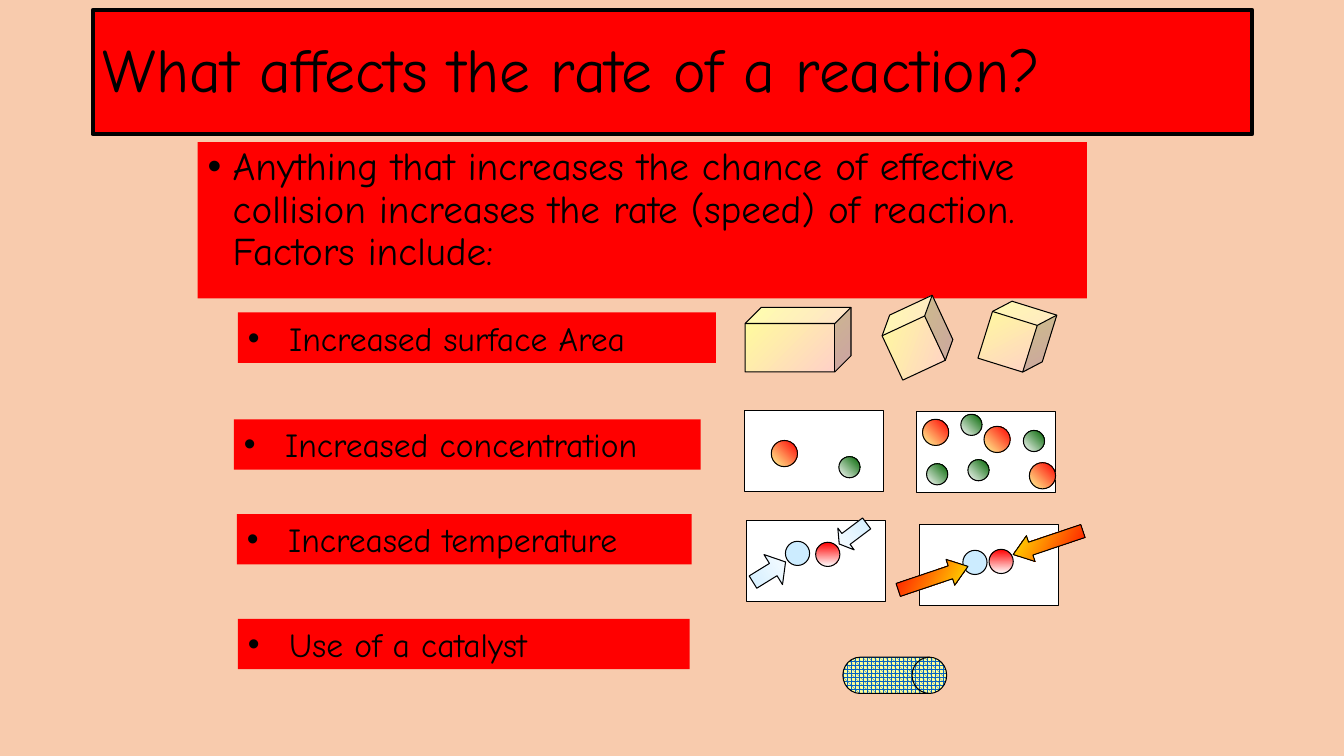
from dataclasses import dataclass

from lxml import etree
from pptx import Presentation
from pptx.dml.color import RGBColor
from pptx.enum.dml import MSO_PATTERN
from pptx.enum.shapes import MSO_SHAPE
from pptx.enum.text import MSO_ANCHOR, MSO_AUTO_SIZE, PP_ALIGN
from pptx.oxml.ns import qn
from pptx.util import Inches, Pt

RECTANGLE = MSO_SHAPE.RECTANGLE
OVAL = MSO_SHAPE.OVAL
CUBE = MSO_SHAPE.CUBE
ARROW = MSO_SHAPE.RIGHT_ARROW
DRUM = MSO_SHAPE.FLOWCHART_DIRECT_ACCESS_STORAGE
SPHERE = MSO_PATTERN.SPHERE
MIDDLE = MSO_ANCHOR.MIDDLE
TOP = MSO_ANCHOR.TOP
LEFT = PP_ALIGN.LEFT
NO_AUTOFIT = MSO_AUTO_SIZE.NONE


@dataclass(frozen=True)
class Theme:
    """Colours, gradients (start, end, clockwise angle) and type sizes."""
    font: str = "Comic Neue"
    title_size: int = 44
    body_size: int = 28
    factor_size: int = 24
    thick: float = 3
    thin: float = 0.75
    background: str = "F8CBAD"
    panel: str = "FF0000"
    ink: str = "000000"
    container: str = "FFFFFF"
    cool_particle: str = "CCECFF"
    mesh: str = "0563C1"
    mesh_back: str = "FFFF99"
    solid: tuple = ("FFFF99", "FFCCCC", 45)
    large_particle: tuple = ("FFFF99", "FF0000", 315)
    small_particle: tuple = ("FFFFFF", "006600", 315)
    hot_particle: tuple = ("FF0000", "FFFFFF", 90)
    slow: tuple = ("CCECFF", "FFFFFF", 0)
    fast: tuple = ("FF0000", "FFFF00", 315)


THEME = Theme()


def rgb(value):
    """Return the colour for a hex string."""
    return RGBColor.from_string(value)


def paint(fill, colour):
    """Fill with one colour or with a gradient tuple."""
    if isinstance(colour, str):
        fill.solid()
        fill.fore_color.rgb = rgb(colour)
        return
    start, end, angle = colour
    fill.gradient()
    fill.gradient_angle = (360 - angle) % 360
    for stop, shade in zip(fill.gradient_stops, (start, end)):
        stop.color.rgb = rgb(shade)


def outline(shape, width):
    """Draw a dark line of the given width around a shape."""
    shape.line.color.rgb = rgb(THEME.ink)
    shape.line.width = Pt(width)


def draw(slide, kind, box, colour, rotation=0):
    """Add a thinly outlined shape in a box given in inches."""
    shape = slide.shapes.add_shape(kind, *map(Inches, box))
    shape.shadow.inherit = False
    paint(shape.fill, colour)
    outline(shape, THEME.thin)
    shape.rotation = rotation
    return shape


def write(shape, text, size, anchor, spacing=1.0, indent=0):
    """Put one left-aligned run in a shape, bulleted if it has an indent."""
    frame = shape.text_frame
    frame.word_wrap = True
    frame.auto_size = NO_AUTOFIT
    frame.vertical_anchor = anchor
    paragraph = frame.paragraphs[0]
    paragraph.alignment = LEFT
    paragraph.line_spacing = spacing
    if indent:
        properties = paragraph._p.get_or_add_pPr()
        properties.set("marL", str(Inches(indent)))
        properties.set("indent", str(-Inches(indent)))
        etree.SubElement(properties, qn("a:buFont")).set("typeface", "Arial")
        etree.SubElement(properties, qn("a:buChar")).set("char", "•")
    run = paragraph.add_run()
    run.text = text
    run.font.name = THEME.font
    run.font.size = Pt(size)
    run.font.color.rgb = rgb(THEME.ink)


def add_title(slide, box, text):
    """Format the title placeholder as an outlined banner."""
    title = slide.shapes.title
    title.left, title.top, title.width, title.height = map(Inches, box)
    paint(title.fill, THEME.panel)
    outline(title, THEME.thick)
    write(title, text, THEME.title_size, MIDDLE, spacing=0.9)


def add_panel(slide, box, text, size, indent, spacing=1.0):
    """Add a bulleted statement on a coloured panel."""
    panel = slide.shapes.add_textbox(*map(Inches, box))
    paint(panel.fill, THEME.panel)
    write(panel, text, size, TOP, spacing, indent)


def add_cubes(slide, left, top):
    """Show one block beside two smaller tilted pieces."""
    for x, y, width, rotation in ((0, 0.03, 1.05, 0), (1.4, 0.01, 0.62, 335),
                                  (2.39, 0, 0.62, 17.3)):
        draw(slide, CUBE, (left + x, top + y, width, 0.64), THEME.solid, rotation)


def add_container(slide, left, top):
    """Add the white vessel that holds particles."""
    draw(slide, RECTANGLE, (left, top, 1.38, 0.81), THEME.container)


def add_mixture(slide, left, top, large, small):
    """Show large and small particles in a container."""
    add_container(slide, left, top)
    for places, size, colour in ((large, 0.26, THEME.large_particle),
                                 (small, 0.21, THEME.small_particle)):
        for x, y in places:
            draw(slide, OVAL, (left + x, top + y, size, size), colour)


def add_collision(slide, left, top, cool, hot, arrows, colour):
    """Show two particles driven together by arrows."""
    add_container(slide, left, top)
    for (x, y), shade in ((cool, THEME.cool_particle), (hot, THEME.hot_particle)):
        draw(slide, OVAL, (left + x, top + y, 0.24, 0.24), shade)
    for x, y, width, height, rotation, flipped, shaft, head in arrows:
        arrow = draw(slide, ARROW, (left + x, top + y, width, height), colour, rotation)
        arrow.adjustments[0] = shaft
        arrow.adjustments[1] = head
        if flipped:
            arrow._element.spPr.find(qn("a:xfrm")).set("flipH", "1")


def add_catalyst(slide, left, top):
    """Show the catalyst as a meshed drum."""
    drum = draw(slide, DRUM, (left, top, 1.03, 0.36), THEME.mesh_back)
    drum.fill.patterned()
    drum.fill.pattern = SPHERE
    drum.fill.fore_color.rgb = rgb(THEME.mesh)
    drum.fill.back_color.rgb = rgb(THEME.mesh_back)


def build_rate_slide(presentation):
    """Build the slide on what affects the rate of a reaction."""
    slide = presentation.slides.add_slide(presentation.slide_layouts[5])
    paint(slide.background.fill, THEME.background)
    add_title(slide, (0.92, 0.1, 11.5, 1.23), "What affects the rate of a reaction?")
    add_panel(slide, (1.96, 1.41, 8.82, 1.55),
              "Anything that increases the chance of effective collision "
              "increases the rate (speed) of reaction. Factors include:",
              THEME.body_size, 0.25, spacing=0.9)
    factors = (("Increased surface Area", 2.36, 3.1, 4.74),
               ("Increased concentration", 2.32, 4.16, 4.63),
               ("Increased temperature", 2.35, 5.1, 4.51),
               ("Use of a catalyst", 2.36, 6.14, 4.48))
    for factor, left, top, width in factors:
        add_panel(slide, (left, top, width, 0.5), factor, THEME.factor_size, 0.41)
    add_cubes(slide, 7.39, 3.02)
    add_mixture(slide, 7.38, 4.07, [(0.27, 0.3)], [(0.94, 0.46)])
    add_mixture(slide, 9.09, 4.08, [(0.06, 0.08), (0.67, 0.15), (1.12, 0.51)],
                [(1.06, 0.19), (0.51, 0.48), (0.44, 0.03), (0.1, 0.52)])
    add_collision(slide, 7.4, 5.16, (0.39, 0.21), (0.69, 0.22),
                  [(0.04, 0.34, 0.38, 0.35, 328.3, False, 0.41, 0.41),
                   (0.89, 0, 0.34, 0.27, 323.1, True, 0.5, 0.31)], THEME.slow)
    add_collision(slide, 9.12, 5.2, (0.43, 0.26), (0.69, 0.25),
                  [(0.91, 0.05, 0.73, 0.27, 341.4, True, 0.5, 0.68),
                   (-0.23, 0.4, 0.73, 0.27, 161.4, True, 0.5, 0.68)], THEME.fast)
    add_catalyst(slide, 8.36, 6.52)


def main():
    """Create and save the presentation."""
    presentation = Presentation()
    presentation.slide_width = Inches(13.33)
    presentation.slide_height = Inches(7.5)
    build_rate_slide(presentation)
    presentation.save("out.pptx")


if __name__ == "__main__":
    main()
